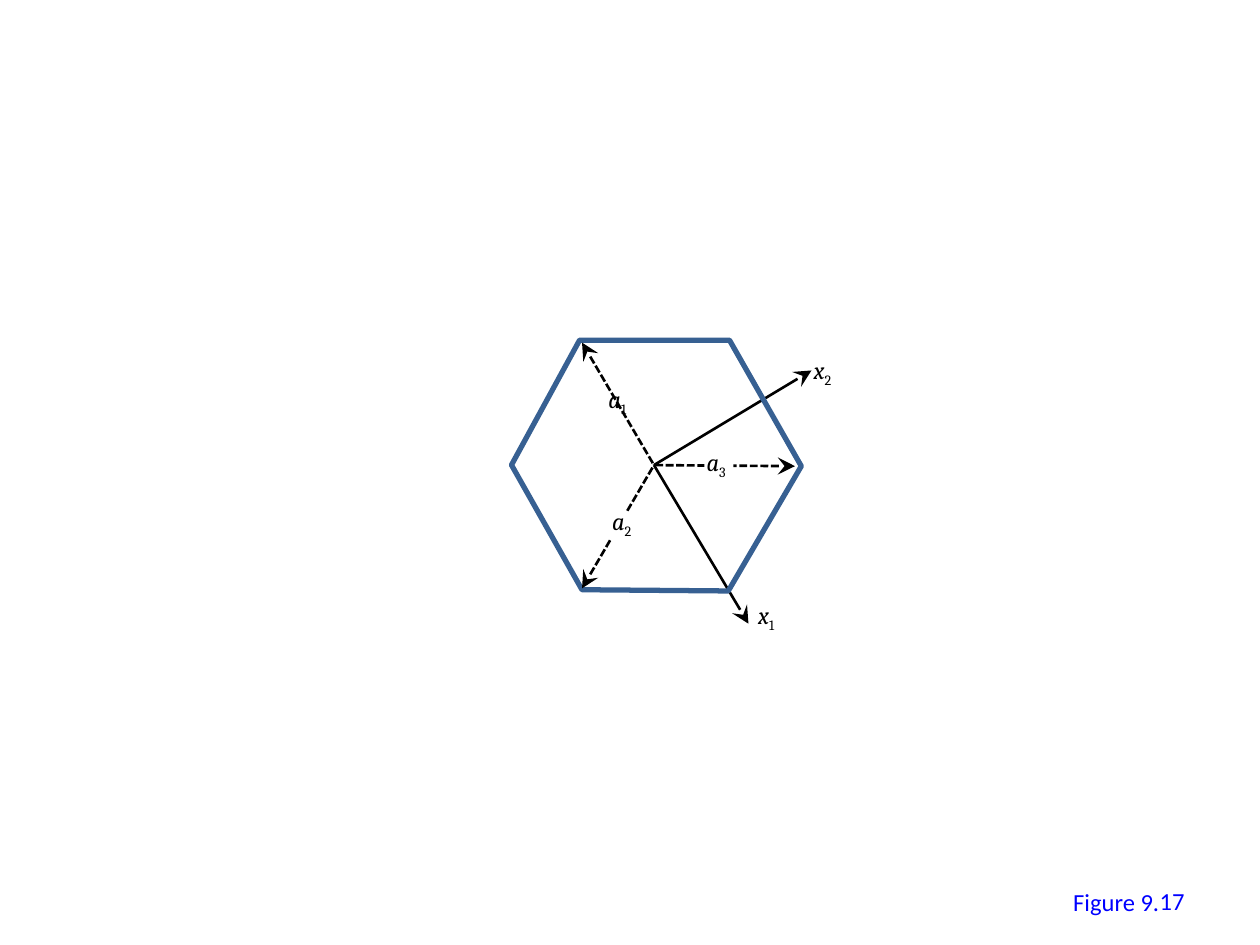
from lxml import etree
from pptx import Presentation
from pptx.dml.color import RGBColor
from pptx.enum import dml, shapes, text
from pptx.oxml.ns import qn
from pptx.util import Pt

ORIGIN = (373.7, 265.8)
HEXAGON = [(331.2, 194.4), (416.9, 194.4), (457.9, 266.4),
           (416.2, 337.7), (332.6, 337), (292.3, 265.7)]
BACK_AXES = [((427.7, 356.4), False), ((463.7, 211.7), False),
             ((454.3, 266.4), True)]
FRONT_AXES = [((332.6, 195.8), True), ((332.6, 336.2), True)]
LABEL_GAPS = [(402.5, 257.8), (343.4, 292.3)]
LABELS = [("a", "1", 340.6, 216), ("a", "2", 342.7, 285.8),
          ("a", "3", 396.7, 252), ("x", "2", 457.9, 199.4),
          ("x", "1", 426.2, 339.1)]
CAPTIONS = [("Figure 9.", 606.2, 503.3, 64.1, 24.2, False),
            ("17", 516.2, 500.4, 167.8, 28.8, True)]
BLACK, WHITE, BLUE, STEEL = "000000", "FFFFFF", "0000FF", "376092"


def color(value):
    return RGBColor.from_string(value)


def add_axis(s, tip, dashed):
    c = s.shapes.add_connector(shapes.MSO_CONNECTOR.STRAIGHT,
                               *map(Pt, tip + ORIGIN))
    c.line.color.rgb = color(BLACK)
    c.line.width = Pt(1.5)
    if dashed:
        c.line.dash_style = dml.MSO_LINE.SQUARE_DOT
        c.line._ln.find(qn("a:prstDash")).set("val", "sysDash")
    etree.SubElement(c.line._ln, qn("a:headEnd"),
                     type="stealth", w="lg", len="lg")
    etree.SubElement(c._element.spPr, qn("a:effectLst"))


def add_text(s, runs, box, font, fill, wrap=False):
    tf = s.shapes.add_textbox(*map(Pt, box)).text_frame
    tf.word_wrap = wrap
    p = tf.paragraphs[0]
    for value in runs:
        p.add_run().text = value
    p.font.name = font
    p.font.size = Pt(14)
    p.font.color.rgb = color(fill)
    return tf


prs = Presentation()
prs.slide_width, prs.slide_height = Pt(720), Pt(540)
s = prs.slides.add_slide(prs.slide_layouts[6])

for tip, dashed in BACK_AXES:
    add_axis(s, tip, dashed)

corners = [(Pt(x), Pt(y)) for x, y in HEXAGON]
builder = s.shapes.build_freeform(*corners[0])
builder.add_line_segments(corners[1:], close=True)
sp = builder.convert_to_shape()
sp.shadow.inherit = False
sp.fill.background()
sp.line.color.rgb = color(STEEL)
sp.line.width = Pt(3)

for tip, dashed in FRONT_AXES:
    add_axis(s, tip, dashed)

for x, y in LABEL_GAPS:
    sp = s.shapes.add_shape(shapes.MSO_SHAPE.RECTANGLE,
                            Pt(x), Pt(y), Pt(16.6), Pt(15.8))
    sp.shadow.inherit = False
    sp.fill.solid()
    sp.fill.fore_color.rgb = color(WHITE)
    sp.line.fill.background()

for letter, index, x, y in LABELS:
    tf = add_text(s, (letter, index), (x, y, 29.2, 24.2), "Cambria", BLACK)
    symbol, subscript = tf.paragraphs[0].runs
    symbol.font.italic = True
    subscript.font._element.set("baseline", "-25000")

for caption, x, y, w, h, is_number in CAPTIONS:
    tf = add_text(s, (caption,), (x, y, w, h), "Calibri", BLUE, is_number)
    if is_number:
        tf.vertical_anchor = text.MSO_ANCHOR.MIDDLE
        tf.paragraphs[0].alignment = text.PP_ALIGN.RIGHT

prs.save("out.pptx")
